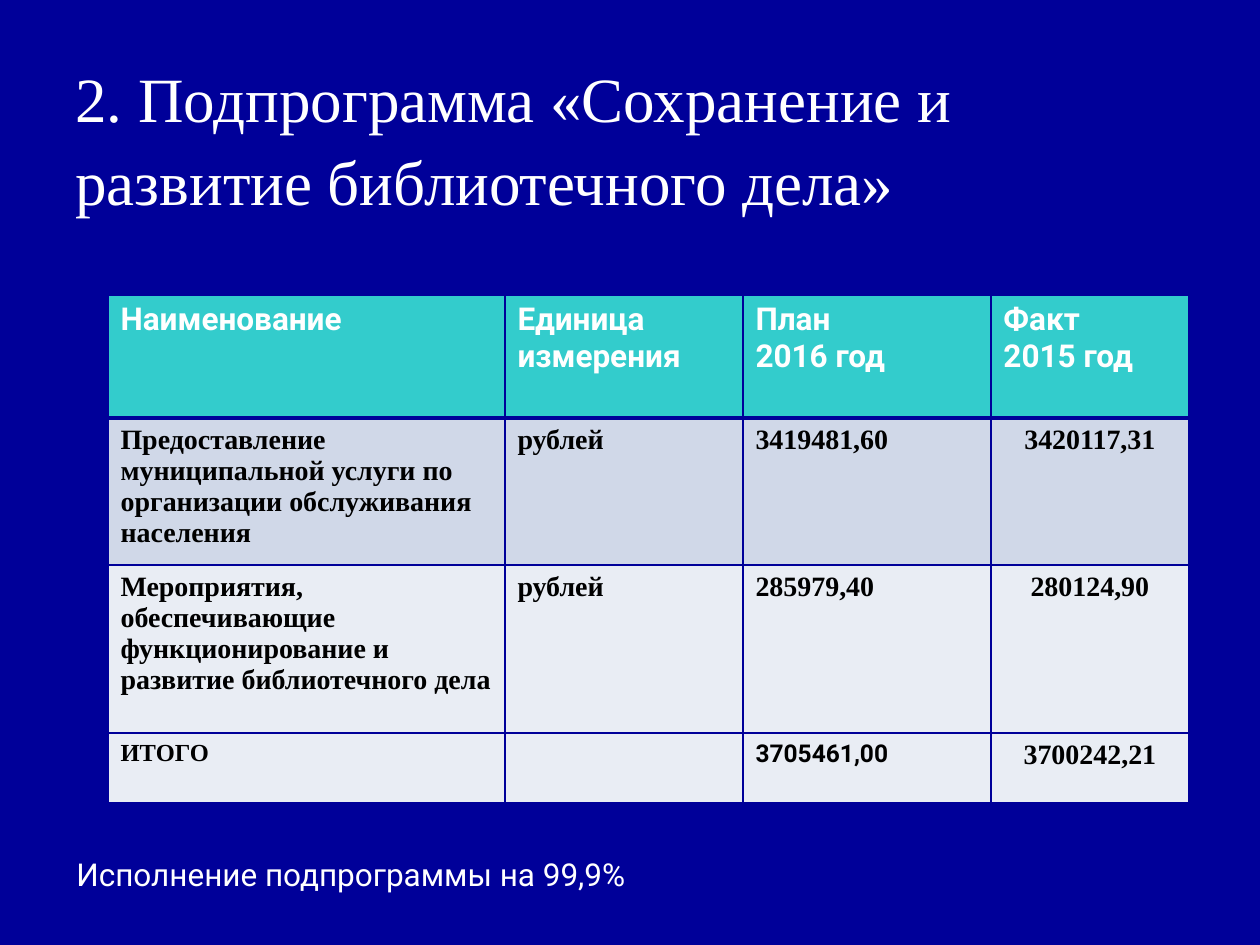
"""Build the slide on the library subprogramme budget."""
from dataclasses import dataclass

import pptx
import pptx.dml.color
import pptx.enum.text
import pptx.oxml
import pptx.oxml.ns
import pptx.util

SCALE = 914400 // 126
COLORS = {
    "navy": "000099",
    "teal": "33CCCC",
    "band": "D0D8E8",
    "pale": "E9EDF4",
    "white": "FFFFFF",
    "black": "000000",
}
ANCHOR = pptx.enum.text.MSO_ANCHOR
ALIGN = pptx.enum.text.PP_ALIGN
SERIF, SANS = "Times New Roman", "Roboto"


@dataclass(frozen=True)
class Style:
    font: str
    size: int
    color: str
    bold: bool = False
    spacing: float = 1.0


@dataclass(frozen=True)
class Caption:
    text: str
    box: tuple[int, int, int, int]
    style: Style
    anchor: ANCHOR


@dataclass(frozen=True)
class Row:
    texts: tuple[str, ...]
    styles: tuple[Style, ...]
    height: int
    fill: str
    top_line: int = 1
    bottom_line: int = 1
    last_align: ALIGN = ALIGN.CENTER


HEADING = Style(SANS, 18, "white", True)
BODY = Style(SERIF, 16, "black", True)
TOTAL_LABEL = Style(SERIF, 14, "black", True)
TOTAL_PLAN = Style(SANS, 14, "black", True)

CAPTIONS = (
    Caption("2. Подпрограмма «Сохранение и развитие библиотечного дела»",
            (63, 40, 1134, 190), Style(SERIF, 36, "white", spacing=1.1), ANCHOR.MIDDLE),
    Caption("Исполнение подпрограммы на 99,9%",
            (64, 849, 1091, 50), Style(SANS, 18, "white"), ANCHOR.TOP),
)
TABLE_LEFT, TABLE_TOP = 108, 295
COLUMN_WIDTHS = (397, 238, 248, 198)
ROWS = (
    Row(("Наименование", "Единица измерения", "План\n2016 год", "Факт\n2015 год"),
        (HEADING,) * 4, 123, "teal", bottom_line=3, last_align=ALIGN.LEFT),
    Row(("Предоставление муниципальной услуги по организации обслуживания населения",
         "рублей", "3419481,60", "3420117,31"),
        (BODY,) * 4, 144, "band", top_line=3),
    Row(("Мероприятия, обеспечивающие функционирование и развитие библиотечного дела",
         "рублей", "285979,40", "280124,90"),
        (BODY,) * 4, 168, "pale"),
    Row(("ИТОГО", "", "3705461,00", "3700242,21"),
        (TOTAL_LABEL, TOTAL_LABEL, TOTAL_PLAN, BODY), 70, "pale"),
)


def px(length: int) -> pptx.util.Emu:
    """Turn whole pixels into EMU."""
    return pptx.util.Emu(length * SCALE)


def rgb(name: str) -> pptx.dml.color.RGBColor:
    """Look up a colour of the palette."""
    return pptx.dml.color.RGBColor.from_string(COLORS[name])


def write(frame, text: str, style: Style, align: ALIGN = ALIGN.LEFT) -> None:
    """Fill a text frame with evenly styled paragraphs."""
    frame.text = text
    formats = {"name": style.font, "size": pptx.util.Pt(style.size), "bold": style.bold}
    for paragraph in frame.paragraphs:
        paragraph.alignment = align
        if style.spacing != 1.0:
            paragraph.line_spacing = style.spacing
        for attribute, value in formats.items():
            setattr(paragraph.font, attribute, value)
        paragraph.font.color.rgb = rgb(style.color)


def draw_caption(slide, caption: Caption) -> None:
    """Place a wrapped line of text on the slide."""
    frame = slide.shapes.add_textbox(*map(px, caption.box)).text_frame
    for attribute, value in {"word_wrap": True, "vertical_anchor": caption.anchor}.items():
        setattr(frame, attribute, value)
    write(frame, caption.text, caption.style)


def draw_borders(cell, row: Row) -> None:
    """Outline a cell in the background colour."""
    properties = cell._tc.get_or_add_tcPr()
    widths = {"lnL": 1, "lnR": 1, "lnT": row.top_line, "lnB": row.bottom_line}
    for side, width in widths.items():
        properties.append(pptx.oxml.parse_xml(
            f'<a:{side} {pptx.oxml.ns.nsdecls("a")} w="{pptx.util.Pt(width)}">'
            f'<a:solidFill><a:srgbClr val="{COLORS["navy"]}"/></a:solidFill></a:{side}>'
        ))


def draw_table(slide) -> None:
    """Draw the budget table row by row."""
    table = slide.shapes.add_table(
        len(ROWS), len(COLUMN_WIDTHS), px(TABLE_LEFT), px(TABLE_TOP),
        px(sum(COLUMN_WIDTHS)), px(sum(row.height for row in ROWS)),
    ).table
    for column, width in zip(table.columns, COLUMN_WIDTHS):
        column.width = px(width)
    for table_row, row in zip(table.rows, ROWS):
        table_row.height = px(row.height)
        aligns = (ALIGN.LEFT,) * (len(COLUMN_WIDTHS) - 1) + (row.last_align,)
        for cell, text, style, align in zip(table_row.cells, row.texts, row.styles, aligns):
            write(cell.text_frame, text, style, align)
            draw_borders(cell, row)
            cell.fill.solid()
            cell.fill.fore_color.rgb = rgb(row.fill)


def main() -> None:
    """Assemble and save the presentation."""
    deck = pptx.Presentation()
    deck.slide_width, deck.slide_height = px(1260), px(945)
    slide = deck.slides.add_slide(deck.slide_layouts[6])
    slide.background.fill.solid()
    slide.background.fill.fore_color.rgb = rgb("navy")
    for caption in CAPTIONS:
        draw_caption(slide, caption)
    draw_table(slide)
    deck.save("out.pptx")


if __name__ == "__main__":
    main()
